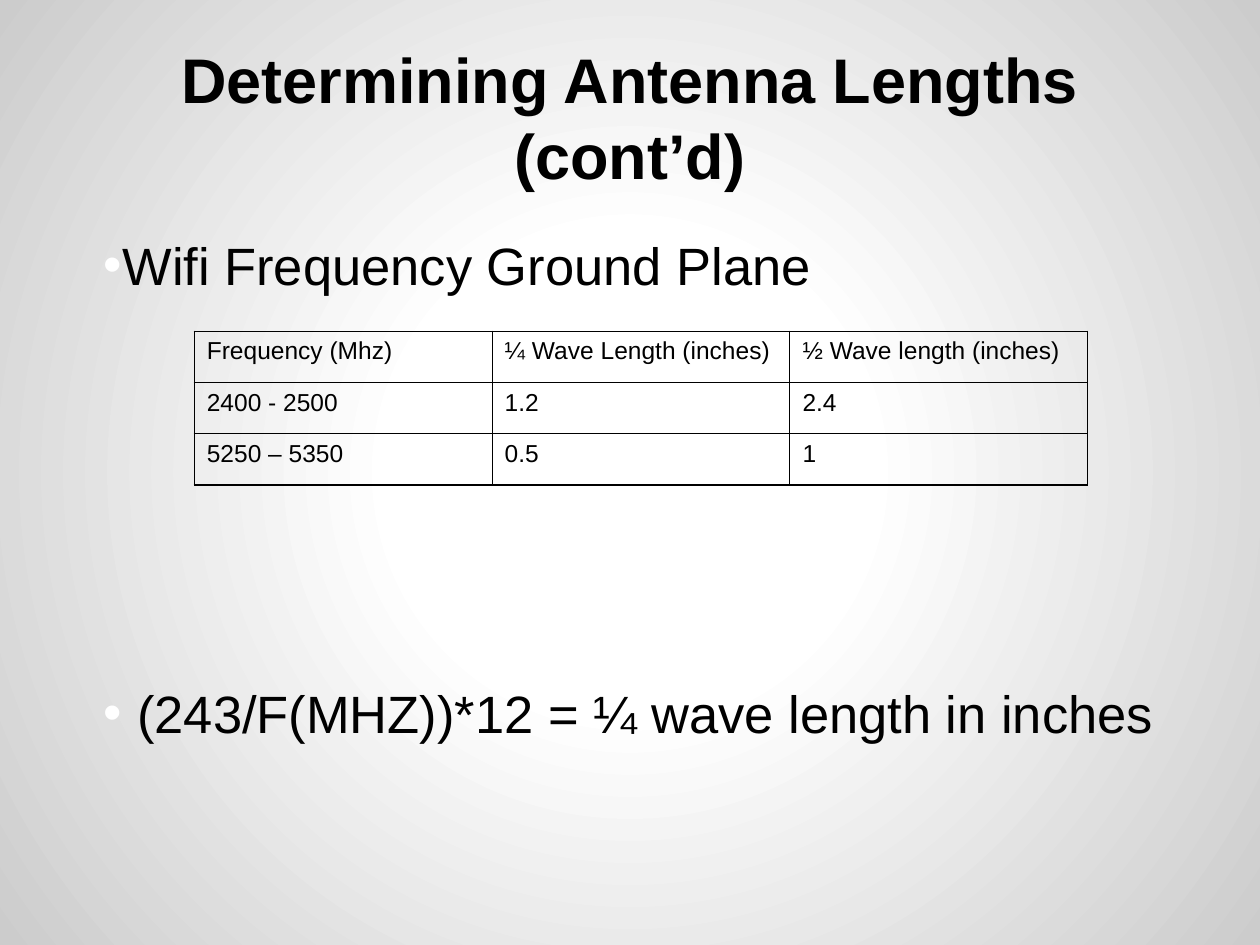
from lxml.etree import SubElement as Sub
from pptx import Presentation as Deck
from pptx.dml.color import RGBColor as Rgb
from pptx.enum.text import MSO_ANCHOR as Anchor, PP_ALIGN as Align
from pptx.oxml import parse_xml as parse
from pptx.oxml.ns import nsdecls, qn
from pptx.util import Pt

INK = {"text": "000000", "glow": "FFFFFF", "edge": "CCCCCC", "dot": "FFFFFF"}


class Page:
    """Holds the style and the current slide, and draws each kind of element."""

    def __init__(self, slide, font="Arial"):
        self.slide = slide
        self.font = font

    def glow(self, stops):
        self.slide.background.fill.gradient()
        old = next(self.slide.element.iter(qn("a:gradFill")))
        marks = "".join(
            f'<a:gs pos="{at * 1000}"><a:srgbClr val="{INK[name]}"/></a:gs>'
            for at, name in stops
        )
        new = parse(
            f'<a:gradFill {nsdecls("a")} rotWithShape="1"><a:gsLst>{marks}</a:gsLst>'
            '<a:path path="circle"><a:fillToRect l="50000" t="50000" r="50000" b="50000"/>'
            "</a:path></a:gradFill>"
        )
        old.getparent().replace(old, new)

    def label(self, para, text, size, bold=False):
        run = para.add_run()
        run.text = text
        font = run.font
        font.name, font.size, font.bold = self.font, Pt(size), bold
        font.color.rgb = Rgb.from_string(INK["text"])

    def frame(self, left, top, wide, high, anchor):
        box = self.slide.shapes.add_textbox(Pt(left), Pt(top), Pt(wide), Pt(high))
        frame = box.text_frame
        frame.word_wrap = True
        frame.vertical_anchor = anchor
        frame.margin_left = frame.margin_right = Pt(7.2)
        frame.margin_top = frame.margin_bottom = Pt(7.2)
        return frame

    def title(self, text, *area):
        para = self.frame(*area, Anchor.MIDDLE).paragraphs[0]
        para.alignment = Align.CENTER
        self.label(para, text, 36, True)

    def bullets(self, items, *area):
        frame = self.frame(*area, Anchor.TOP)
        for index, (text, gap) in enumerate(items):
            para = frame.add_paragraph() if index else frame.paragraphs[0]
            para.space_before = Pt(gap)
            props = para._p.get_or_add_pPr()
            props.set("marL", str(Pt(27)))
            props.set("indent", str(Pt(-10.8)))
            Sub(Sub(props, qn("a:buClr")), qn("a:srgbClr"), val=INK["dot"])
            Sub(props, qn("a:buFont"), typeface=self.font)
            Sub(props, qn("a:buChar"), char="•")
            self.label(para, text, 30)

    def border(self, cell):
        props = cell._tc.get_or_add_tcPr()
        for place, side in enumerate(("lnL", "lnR", "lnT", "lnB")):
            props.insert(place, parse(
                f'<a:{side} {nsdecls("a")} w="{Pt(0.75)}"><a:solidFill>'
                f'<a:srgbClr val="{INK["text"]}"/></a:solidFill></a:{side}>'
            ))

    def table(self, rows, left, top, wide, high):
        grid = self.slide.shapes.add_table(
            len(rows), len(rows[0]), Pt(left), Pt(top), Pt(wide), Pt(high)
        ).table
        grid.first_row = grid.horz_banding = False
        for cell, text in zip(grid.iter_cells(), sum(rows, [])):
            cell.fill.background()
            self.border(cell)
            self.label(cell.text_frame.paragraphs[0], text, 14)


def main():
    deck = Deck()
    deck.slide_width, deck.slide_height = Pt(720), Pt(540)
    page = Page(deck.slides.add_slide(deck.slide_layouts[6]))
    page.glow([(0, "glow"), (30, "glow"), (100, "edge")])
    page.title("Determining Antenna Lengths (cont’d)", 36, 21.6, 648, 90)
    page.bullets([
        ("Wifi Frequency Ground Plane", 6.4),
        (" (243/F(MHZ))*12 = ¼ wave length in inches", 220),
    ], 36, 126, 648, 356.4)
    page.table([
        ["Frequency (Mhz)", "¼ Wave Length (inches)", "½ Wave length (inches)"],
        ["2400 - 2500", "1.2", "2.4"],
        ["5250 – 5350", "0.5", "1"],
    ], 111, 189.3, 510.6, 87.9)
    deck.save("out.pptx")


if __name__ == "__main__":
    main()
